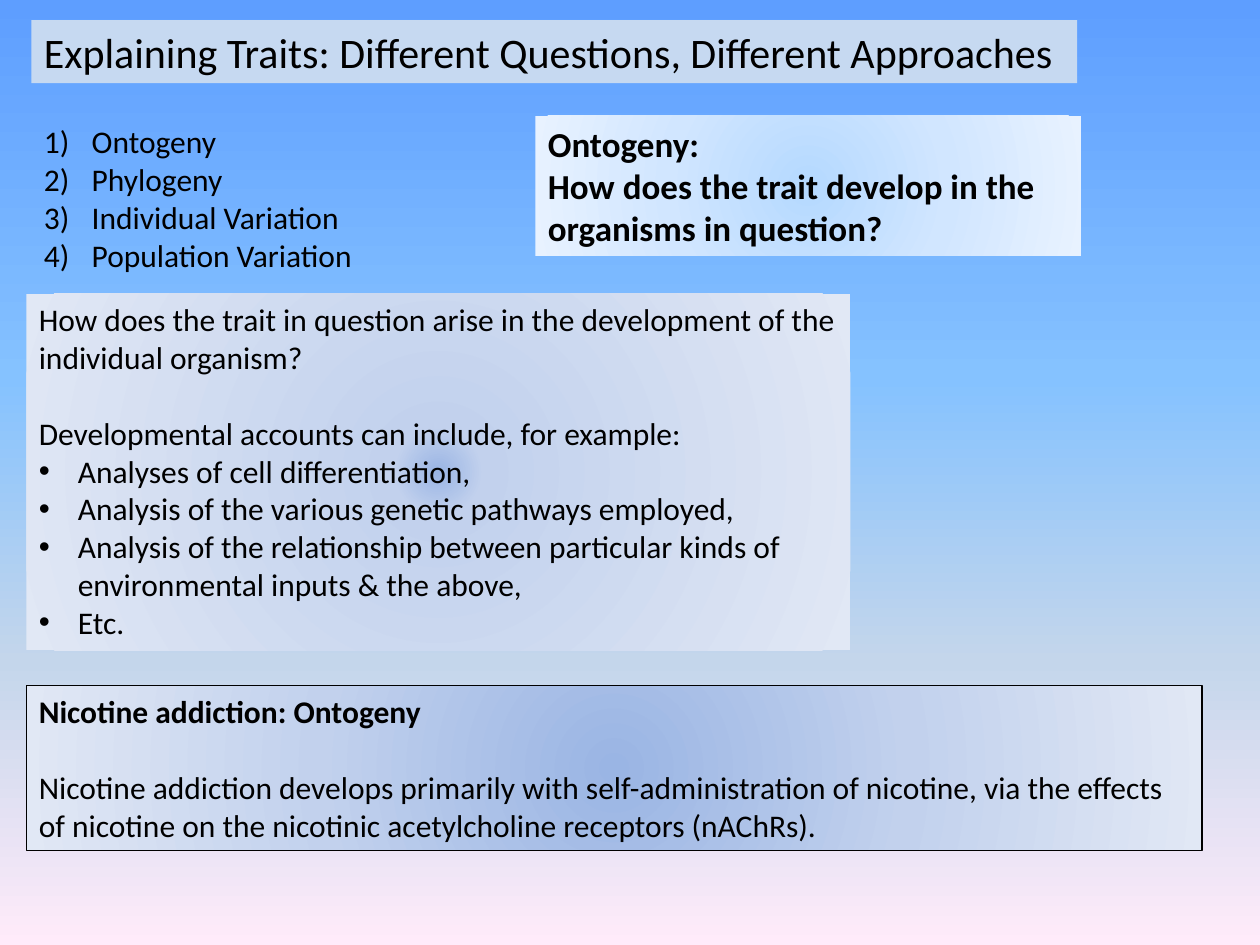
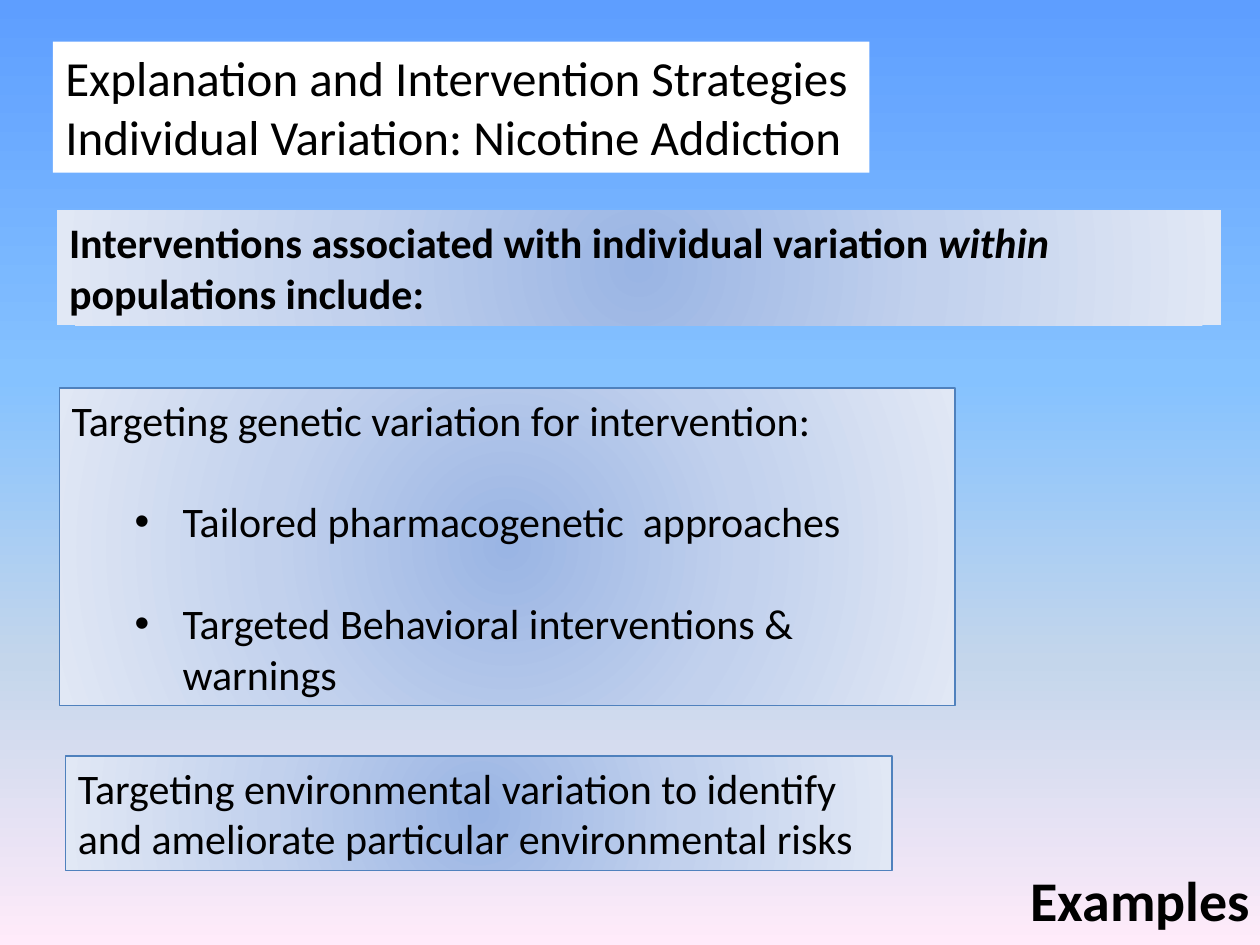
from dataclasses import dataclass

from lxml import etree
from pptx import Presentation, util as u
from pptx.dml.color import RGBColor
from pptx.enum import text
from pptx.oxml import ns

# Shared look
FONT = "Calibri"
BLACK = "000000"
WHITE = "FFFFFF"
TITLE_BLUE = "C6D9F1"
EDGE_BLUE = "4F81BD"
SKY = [(0, "5E9EFF"), (40, "85C2FF"), (70, "C4D6EB"), (100, "FFEBFA")]
PERIWINKLE = [(0, "9AB5E4"), (50, "C2D1ED"), (100, "E1E8F5")]
SMALL_CORE = [(0, "9AB5E4"), (10, "C2D1ED"), (100, "E1E8F5")]
PALE_BLUE = [(0, "B5D9FF"), (50, "D1E6FF"), (100, "E8F2FF")]
LINE_HEIGHT = 1.22


@dataclass
class Line:
    """One paragraph; gap leaves one line of space above it."""
    words: str
    bold: bool = False
    italic: str = ""
    gap: bool = False
    bullet: str = ""
    level: int = 0
    indent: float = 0
    hang: float = 0


def color(value):
    return RGBColor.from_string(value)


def add_child(parent, name, **attributes):
    return etree.SubElement(parent, ns.qn(name), attributes)


def set_gradient(fill, properties, stops, radial=True):
    """Put a gradient in place of the solid fill of the given properties."""
    fill.solid()
    solid = properties.find(ns.qn("a:solidFill"))
    gradient = etree.Element(ns.qn("a:gradFill"), rotWithShape="1")
    stop_list = add_child(gradient, "a:gsLst")
    for percent, value in stops:
        stop = add_child(stop_list, "a:gs", pos=str(percent * 1000))
        add_child(stop, "a:srgbClr", val=value)
    if radial:
        center = add_child(gradient, "a:path", path="circle")
        add_child(center, "a:fillToRect", l="50000", t="50000", r="50000", b="50000")
    else:
        add_child(gradient, "a:lin", ang="5400000", scaled="0")
    properties.replace(solid, gradient)


def set_background(master):
    fill = master.background.fill
    fill.solid()
    properties = master.element.find(".//" + ns.qn("p:bgPr"))
    set_gradient(fill, properties, SKY, radial=False)


def set_bullet(para, line):
    properties = para._p.get_or_add_pPr()
    properties.set("marL", str(u.Inches(line.indent)))
    properties.set("indent", str(-u.Inches(line.hang)))
    if line.bullet == "number":
        add_child(properties, "a:buFont", typeface="+mj-lt")
        add_child(properties, "a:buAutoNum", type="arabicParenR")
    else:
        add_child(properties, "a:buFont", typeface="Arial")
        add_child(properties, "a:buChar", char=line.bullet)


def write_line(para, line, size):
    if line.italic:
        before, accent, after = line.words.partition(line.italic)
        para.text = before
        for part in (accent, after):
            para.add_run().text = part
    else:
        para.text = line.words
    for span in para.runs:
        span.font.name = FONT
        span.font.size = u.Pt(size)
        span.font.bold = line.bold
        span.font.italic = bool(line.italic) and span.text == line.italic
        span.font.color.rgb = color(BLACK)
    para.level = line.level
    if line.gap:
        para.space_before = u.Pt(round(size * LINE_HEIGHT, 1))
    if line.bullet:
        set_bullet(para, line)


def add_box(page, place, size, lines, fill=None, edge=None, wrap=True):
    """Add a text box; fill is a hex colour or a list of gradient stops."""
    box = page.shapes.add_textbox(*map(u.Inches, place))
    if isinstance(fill, str):
        box.fill.solid()
        box.fill.fore_color.rgb = color(fill)
    elif fill:
        set_gradient(box.fill, box.element.spPr, fill)
    if edge:
        box.line.color.rgb = color(edge)
        box.line.width = u.Pt(0.75)
    frame = box.text_frame
    frame.word_wrap = wrap
    frame.auto_size = text.MSO_AUTO_SIZE.SHAPE_TO_FIT_TEXT
    for index, line in enumerate(lines):
        para = frame.add_paragraph() if index else frame.paragraphs[0]
        write_line(para, line, size)


def add_title(page, place, size, titles, fill):
    add_box(page, place, size, [Line(title) for title in titles], fill, wrap=False)


def bullets(items, **style):
    return [Line(item, **style) for item in items]


def build_ontogeny(page):
    add_title(page, (0.25, 0.16, 8.3, 0.5), 24,
              ["Explaining Traits: Different Questions, Different Approaches"], TITLE_BLUE)

    # Developmental accounts
    accounts = [
        "Analyses of cell differentiation,",
        "Analysis of the various genetic pathways employed,",
        "Analysis of the relationship between particular kinds of "
        "environmental inputs & the above,",
        "Etc.",
    ]
    add_box(page, (0.21, 2.33, 6.54, 2.83), 18, [
        Line("How does the trait in question arise in the development of the "
             "individual organism?"),
        Line("Developmental accounts can include, for example:", gap=True),
        *bullets(accounts, bullet="•", indent=0.31, hang=0.31),
    ], SMALL_CORE)

    # The four questions, and the one at hand
    questions = ["Ontogeny", "Phylogeny", "Individual Variation", "Population Variation"]
    add_box(page, (0.25, 0.92, 2.67, 1.31), 18,
            bullets(questions, bullet="number", indent=0.38, hang=0.38), wrap=False)
    add_box(page, (4.25, 0.92, 4.33, 1.11), 20, [
        Line("Ontogeny:", bold=True),
        Line("How does the trait develop in the organisms in question?", bold=True),
    ], PALE_BLUE)

    # Worked case
    add_box(page, (0.21, 5.44, 9.33, 1.31), 18, [
        Line("Nicotine addiction: Ontogeny", bold=True),
        Line("Nicotine addiction develops primarily with self-administration of "
             "nicotine, via the effects of nicotine on the nicotinic acetylcholine "
             "receptors (nAChRs).", gap=True),
    ], PERIWINKLE, BLACK)


def build_interventions(page):
    add_title(page, (0.42, 0.33, 6.48, 1.04), 28,
              ["Explanation and Intervention Strategies",
               "Individual Variation: Nicotine Addiction"], WHITE)
    add_box(page, (0.45, 1.67, 9.24, 0.91), 24, [
        Line("Interventions associated with individual variation within "
             "populations include:", bold=True, italic="within "),
    ], PERIWINKLE)

    # Genetic and environmental targets
    approaches = ["Tailored pharmacogenetic  approaches",
                  "Targeted Behavioral interventions & warnings"]
    add_box(page, (0.47, 3.08, 7.11, 2.52), 24, [
        Line("Targeting genetic variation for intervention:"),
        *bullets(approaches, bullet="•", gap=True, level=1, indent=0.88, hang=0.38),
    ], PERIWINKLE, EDGE_BLUE)
    add_box(page, (0.52, 6, 6.56, 0.91), 24, [
        Line("Targeting environmental variation to identify and ameliorate "
             "particular environmental risks"),
    ], PERIWINKLE, EDGE_BLUE)

    # Corner label
    add_box(page, (8.08, 6.82, 1.96, 0.64), 32, [Line("Examples", bold=True)], wrap=False)


def main():
    deck = Presentation()
    deck.slide_width = u.Inches(10)
    deck.slide_height = u.Inches(7.5)
    set_background(deck.slide_master)
    blank = deck.slide_layouts[6]
    for build in (build_ontogeny, build_interventions):
        build(deck.slides.add_slide(blank))
    deck.save("out.pptx")


if __name__ == "__main__":
    main()
